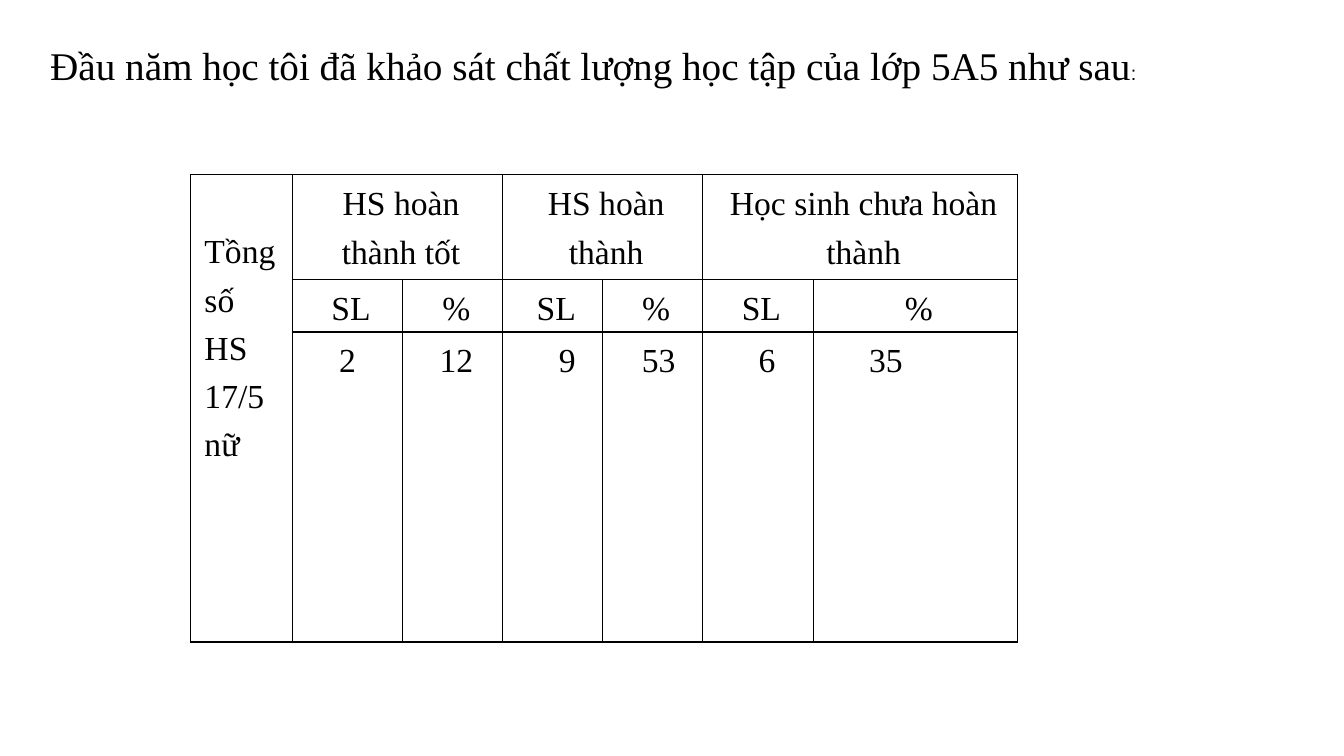
from pptx import Presentation
from pptx.dml.color import RGBColor
from pptx.enum.text import MSO_ANCHOR, PP_ALIGN
from pptx.oxml import parse_xml
from pptx.oxml.ns import nsdecls
from pptx.util import Pt

BLACK = RGBColor(0x00, 0x00, 0x00)
SERIF = "Times New Roman"
INSET = 5


def add_span(para, text, size, font=SERIF):
    span = para.add_run()
    span.text = text
    span.font.size = Pt(size)
    span.font.name = font
    span.font.color.rgb = BLACK


def fill_cell(cell, lines, align=PP_ALIGN.CENTER, indent=INSET):
    for number, line in enumerate(lines):
        frame = cell.text_frame
        para = frame.add_paragraph() if number else frame.paragraphs[0]
        para.alignment = align
        para.line_spacing = 1.3
        properties = para._p.get_or_add_pPr()
        properties.set("marL", str(Pt(indent)))
        properties.set("indent", "0")
        add_span(para, line, 24)


deck = Presentation()
deck.slide_width, deck.slide_height = Pt(960), Pt(540)
page = deck.slides.add_slide(deck.slide_layouts[6])

# Heading
box = page.shapes.add_textbox(Pt(28.8), Pt(24.5), Pt(798), Pt(63.4))
frame = box.text_frame
frame.word_wrap = True
frame.vertical_anchor = MSO_ANCHOR.TOP
frame.margin_top = Pt(5.3)
para = frame.paragraphs[0]
add_span(para, "Đầu năm học tôi đã khảo sát chất lượng học tập của lớp 5A5 như sau", 28)
add_span(para, ":", 14, "Arial")

# Table grid
column_widths = [72.7, 79, 71.4, 71.4, 71.4, 79, 146]
row_heights = [68.6, 34.8, 206.4]
table = page.shapes.add_table(
    len(row_heights), len(column_widths), Pt(136.1), Pt(124.8),
    Pt(sum(column_widths)), Pt(sum(row_heights))).table
table.first_row = False
table.horz_banding = False
for column, width in zip(table.columns, column_widths):
    column.width = Pt(width)
for row, height in zip(table.rows, row_heights):
    row.height = Pt(height)

# Cell insets and black borders
for cell in table.iter_cells():
    cell.margin_left = cell.margin_right = Pt(INSET)
    cell.margin_top = cell.margin_bottom = Pt(0)
    properties = cell._tc.get_or_add_tcPr()
    for side in ("lnL", "lnR", "lnT", "lnB"):
        properties.append(parse_xml(
            f'<a:{side} {nsdecls("a")} w="{Pt(1)}"><a:solidFill>'
            f'<a:srgbClr val="{BLACK}"/></a:solidFill></a:{side}>'))
    cell.fill.background()

# Class total, one line lower than the headers
total = table.cell(0, 0)
total.merge(table.cell(2, 0))
total.margin_top = Pt(34.3)
fill_cell(total, ["Tồng số HS", "17/5 nữ"], PP_ALIGN.LEFT)

# Group headers, each over a count and a percentage
groups = ["HS hoàn thành tốt", "HS hoàn thành", "Học sinh chưa hoàn thành"]
for number, group in enumerate(groups):
    left = 1 + 2 * number
    header = table.cell(0, left)
    header.merge(table.cell(0, left + 1))
    fill_cell(header, [group])
    fill_cell(table.cell(1, left), ["SL"])
    fill_cell(table.cell(1, left + 1), ["%"])

# Survey results
results = [
    ("2", PP_ALIGN.CENTER, 0),
    ("12", PP_ALIGN.CENTER, INSET),
    ("9", PP_ALIGN.LEFT, 35),
    ("53", PP_ALIGN.LEFT, 23),
    ("6", PP_ALIGN.LEFT, 35),
    ("35", PP_ALIGN.LEFT, 35),
]
for column, (value, align, indent) in enumerate(results, start=1):
    fill_cell(table.cell(2, column), [value], align, indent)

deck.save("out.pptx")
